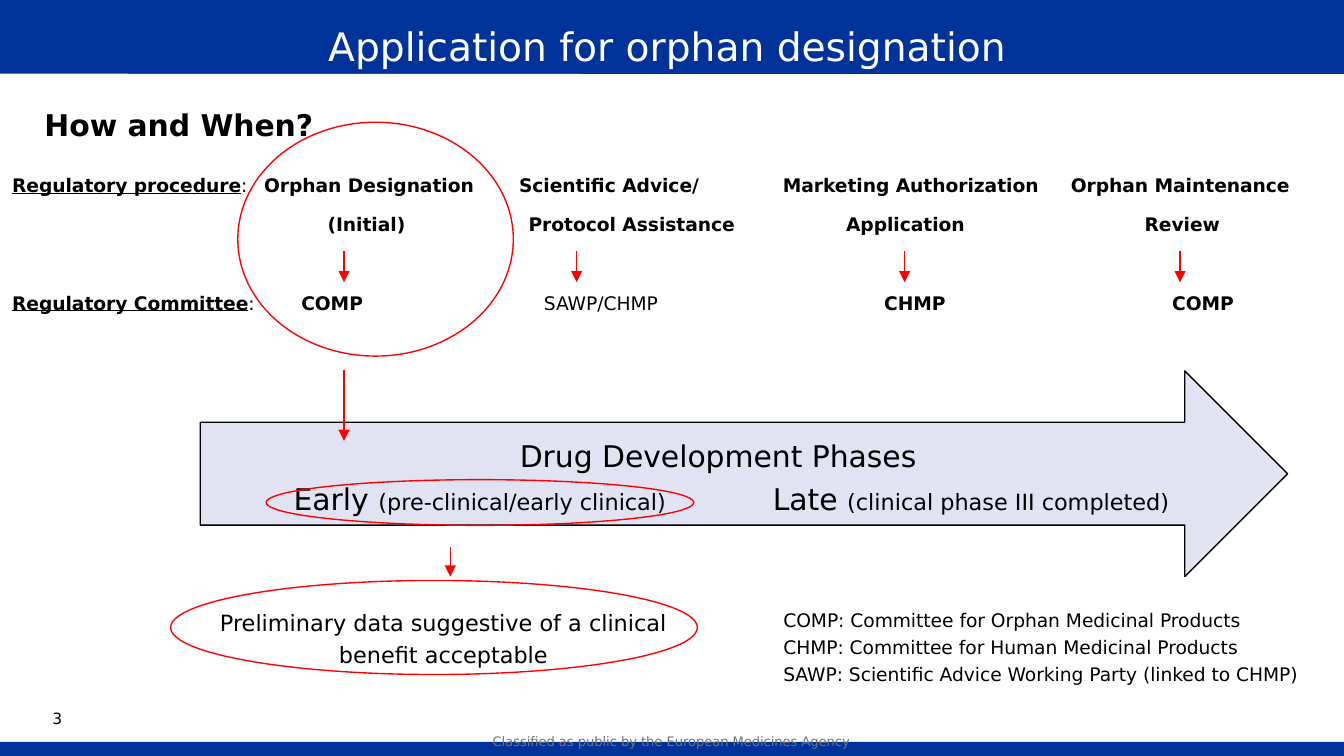
"""Build the slide on applying for orphan designation."""
import pptx
import pptx.dml.color
import pptx.enum.shapes
import pptx.enum.text
import pptx.oxml
import pptx.oxml.ns
import pptx.util

Pt = pptx.util.Pt
RGBColor = pptx.dml.color.RGBColor
SHAPE = pptx.enum.shapes.MSO_SHAPE
ALIGN = pptx.enum.text.PP_ALIGN
ANCHOR = pptx.enum.text.MSO_ANCHOR
NS = pptx.oxml.ns.nsdecls("a")

FONT = "DejaVu Sans"
BLUE = RGBColor(0x00, 0x33, 0x99)
RED = RGBColor(0xFF, 0x00, 0x00)
LAVENDER = RGBColor(0xE1, 0xE3, 0xF2)
GREY = RGBColor(0x73, 0x73, 0x73)
BLACK = RGBColor(0x00, 0x00, 0x00)
WHITE = RGBColor(0xFF, 0xFF, 0xFF)


def add_shape(s, kind, box, fill=None, line=None):
    sp = s.shapes.add_shape(kind, *map(Pt, box))
    sp.shadow.inherit = False
    if fill is None:
        sp.fill.background()
    else:
        sp.fill.solid()
        sp.fill.fore_color.rgb = fill
    if line is None:
        sp.line.fill.background()
    else:
        sp.line.color.rgb = line
        sp.line.width = Pt(0.75)
    return sp


def add_line(s, start, end, color=RED, width=0.75, arrow=True):
    cn = s.shapes.add_connector(
        pptx.enum.shapes.MSO_CONNECTOR.STRAIGHT, *map(Pt, start + end))
    cn.line.color.rgb = color
    cn.line.width = Pt(width)
    if arrow:
        cn.line._get_or_add_ln().append(
            pptx.oxml.parse_xml(f'<a:tailEnd {NS} type="triangle"/>'))
    cn._element.spPr.append(pptx.oxml.parse_xml(f"<a:effectLst {NS}/>"))


def add_box(s, box, inset=(0, 0), wrap=True, anchor=ANCHOR.TOP):
    tf = s.shapes.add_textbox(*map(Pt, box)).text_frame
    set_frame(tf, inset, wrap, anchor)
    return tf


def set_frame(tf, inset, wrap=True, anchor=ANCHOR.TOP):
    tf.margin_left = tf.margin_right = Pt(inset[0])
    tf.margin_top = tf.margin_bottom = Pt(inset[1])
    tf.word_wrap = wrap
    tf.vertical_anchor = anchor


def add_text(tf, *runs, size, color=BLACK, bold=False, align=ALIGN.LEFT,
             spacing=1.2, after=0, tabs=()):
    """Add a paragraph; a run is a string or a (string, font settings) pair."""
    p = tf.paragraphs[0] if not tf.text else tf.add_paragraph()
    if tabs:
        stops = "".join(f'<a:tab pos="{int(Pt(t))}" algn="l"/>' for t in tabs)
        p._p.get_or_add_pPr().append(
            pptx.oxml.parse_xml(f"<a:tabLst {NS}>{stops}</a:tabLst>"))
    p.alignment = align
    p.line_spacing = spacing
    p.space_after = Pt(after)
    for run in runs:
        text, changes = (run, {}) if isinstance(run, str) else run
        r = p.add_run()
        r.text = text
        r.font.name = FONT
        r.font.color.rgb = color
        r.font.size = Pt(changes.get("size", size))
        r.font.bold = changes.get("bold", bold)
        r.font.underline = changes.get("underline", False)


def add_frame(s):
    add_shape(s, SHAPE.RECTANGLE, (0, 0, 720, 39.6), BLUE)
    add_line(s, (0, 39.6), (720, 40), WHITE, 0.25, arrow=False)
    add_shape(s, SHAPE.RECTANGLE, (0, 397.5, 720, 7.5), BLUE)
    tf = add_box(s, (252.7, 388.1, 213.8, 16.6), anchor=ANCHOR.MIDDLE)
    add_text(tf, "Classified as public by the European Medicines Agency",
             size=7, color=GREY, align=ALIGN.CENTER)
    tf = add_box(s, (25.9, 10.1, 663.1, 28.1))
    add_text(tf, "Application for orphan designation", size=21, color=WHITE,
             align=ALIGN.CENTER, spacing=Pt(27))
    tf = add_box(s, (28.1, 378, 24.5, 14.4))
    add_text(tf, "3", size=8.3, spacing=Pt(12))
    tf = add_box(s, (23.8, 55.4, 636.5, 36.7))
    add_text(tf, "How and When?", size=16, bold=True, spacing=Pt(21))


def add_phases(s):
    sp = add_shape(s, SHAPE.RIGHT_ARROW, (107.3, 198.7, 582.5, 110.2),
                   LAVENDER, BLACK)
    tf = sp.text_frame
    set_frame(tf, (5.76, 5.76), anchor=ANCHOR.MIDDLE)
    small = {"size": 12}
    add_text(tf, "Drug Development Phases", size=16, align=ALIGN.CENTER)
    add_text(tf, "\tEarly ", ("(pre-clinical/early clinical)", small),
             "\tLate ", ("(clinical phase III completed)", small),
             size=16, tabs=(44.3, 301))


def add_procedures(s):
    tf = add_box(s, (6.48, 84.2, 689.8, 63.4))
    label = {"bold": True, "underline": True}
    plain = {"bold": False}
    add_text(tf, ("Regulatory procedure", label), (":", plain),
             "\tOrphan Designation\tScientific Advice/"
             "\tMarketing Authorization\tOrphan Maintenance",
             size=10, bold=True, spacing=Pt(21), after=9,
             tabs=(135, 271.6, 412.9, 567.2))
    add_text(tf, "\t(Initial)\tProtocol Assistance\tApplication\tReview",
             size=10, bold=True, spacing=Pt(12), after=30,
             tabs=(169, 276.7, 446.8, 606.7))
    add_text(tf, ("Regulatory Committee", label), (":", plain), "\tCOMP",
             ("\tSAWP/CHMP", plain), "\tCHMP\tCOMP",
             size=10, bold=True, spacing=Pt(12),
             tabs=(154.9, 284.9, 467.2, 621.5))
    for x in (184.3, 308.9, 484.6, 632.2):
        add_line(s, (x, 134.6), (x, 151.2))


def add_notes(s):
    tf = add_box(s, (103.7, 319.7, 267.8, 40.3), (7.2, 3.6))
    add_text(tf, "Preliminary data suggestive of a clinical benefit acceptable",
             size=12, align=ALIGN.CENTER)
    tf = add_box(s, (412.6, 320.4, 307.4, 49.7), (7.2, 3.6), wrap=False)
    for entry in ("COMP: Committee for Orphan Medicinal Products",
                  "CHMP: Committee for Human Medicinal Products",
                  "SAWP: Scientific Advice Working Party (linked to CHMP)"):
        add_text(tf, entry, size=10)


def add_highlights(s):
    for box in ((127.4, 65.5, 147.6, 125.3), (142.6, 257, 229, 24.5),
                (91.4, 311, 282.2, 50.4)):
        add_shape(s, SHAPE.OVAL, box, line=RED)
    add_line(s, (184.3, 198), (184.3, 236.2))
    add_line(s, (241.2, 293), (241.2, 308.9))


def main():
    prs = pptx.Presentation()
    prs.slide_width, prs.slide_height = Pt(720), Pt(405)
    s = prs.slides.add_slide(prs.slide_layouts[6])
    add_frame(s)
    add_phases(s)
    add_highlights(s)
    add_procedures(s)
    add_notes(s)
    prs.save("out.pptx")


if __name__ == "__main__":
    main()
